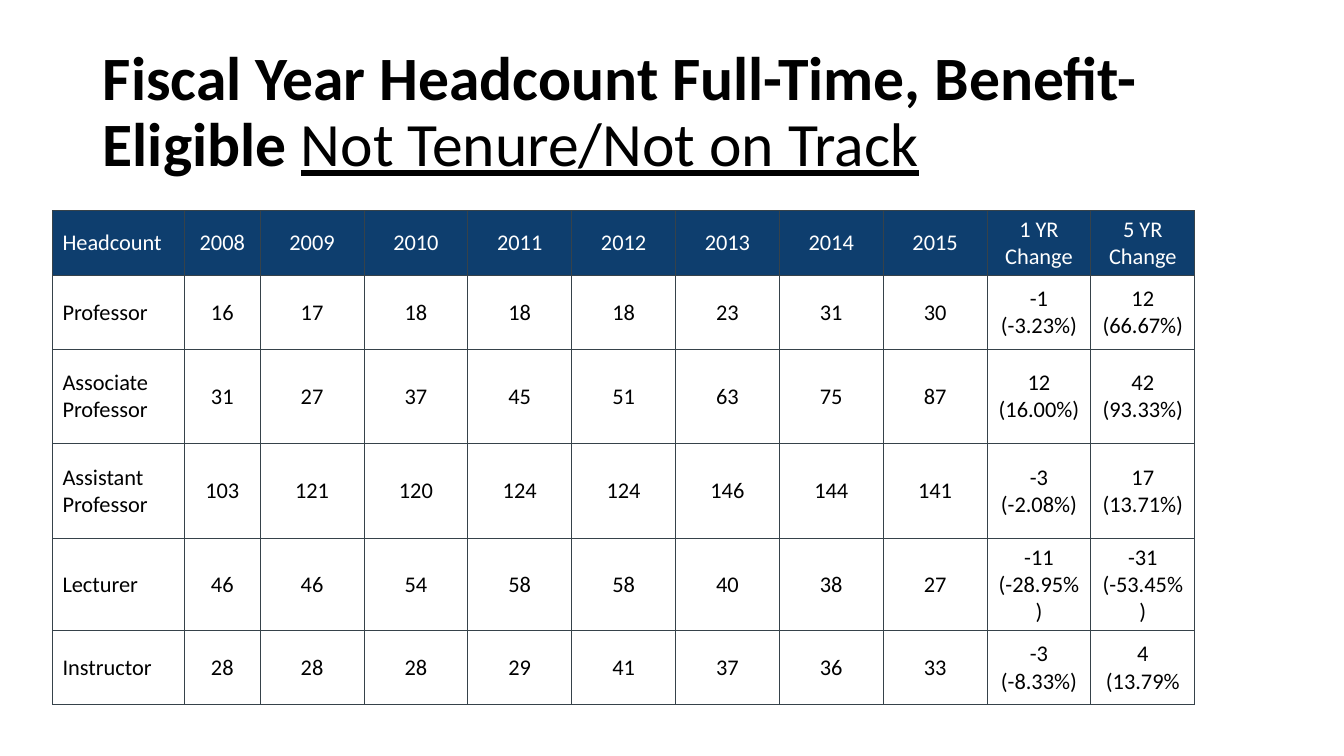
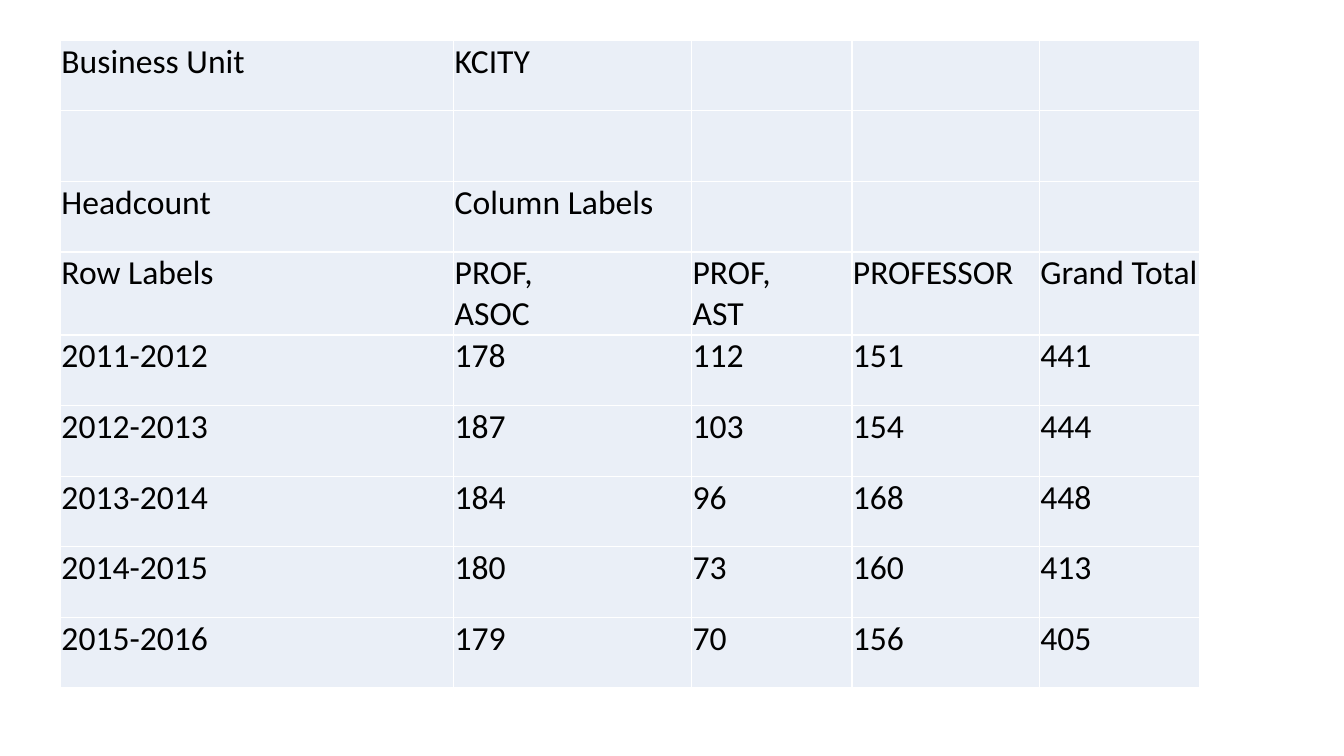
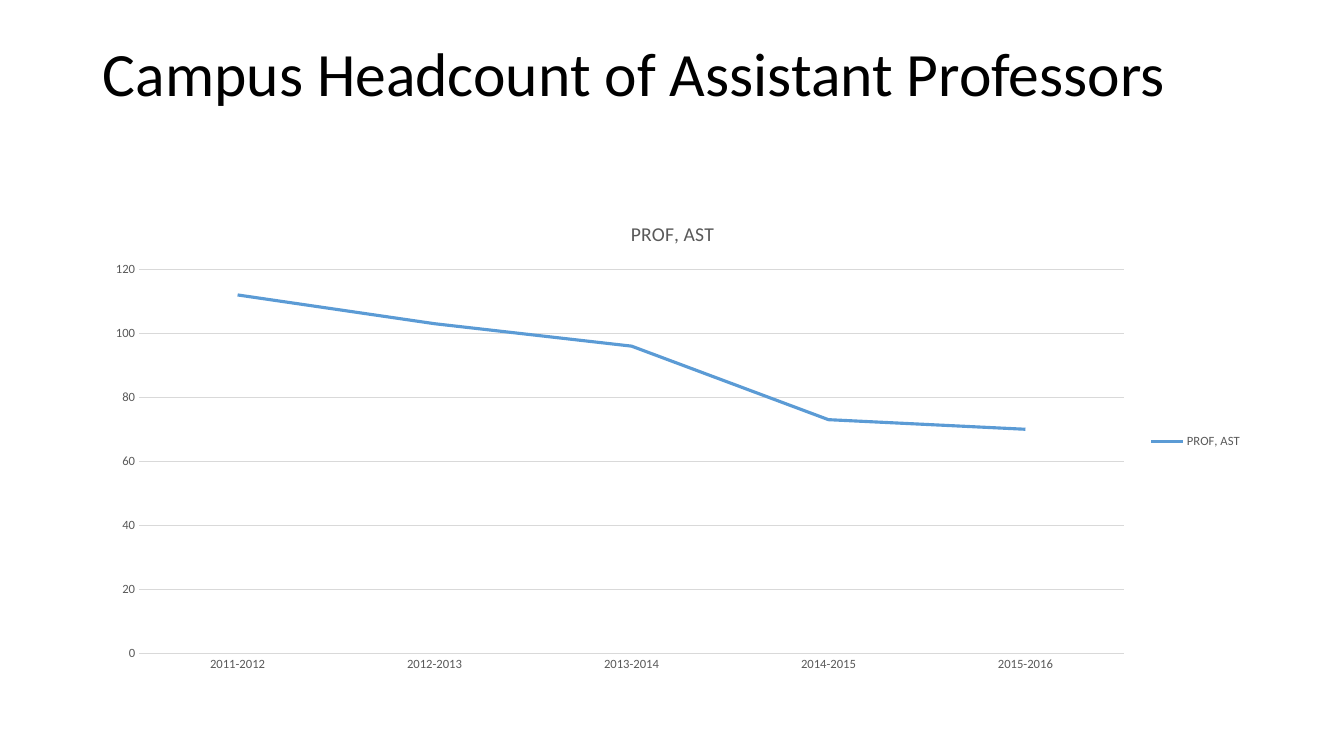
from dataclasses import dataclass

from lxml import etree
from pptx import Presentation
from pptx.chart.data import CategoryChartData
from pptx.dml.color import RGBColor
from pptx.enum.chart import XL_CHART_TYPE, XL_LEGEND_POSITION, XL_MARKER_STYLE, XL_TICK_MARK
from pptx.enum.text import MSO_ANCHOR, MSO_AUTO_SIZE, PP_ALIGN
from pptx.oxml.ns import qn
from pptx.util import Inches, Pt

LEFT, CENTER = PP_ALIGN.LEFT, PP_ALIGN.CENTER
TOP, MIDDLE = MSO_ANCHOR.TOP, MSO_ANCHOR.MIDDLE
NO_AUTOFIT = MSO_AUTO_SIZE.NONE
LINE_CHART = XL_CHART_TYPE.LINE
LEGEND_RIGHT = XL_LEGEND_POSITION.RIGHT
NO_MARKER = XL_MARKER_STYLE.NONE
NO_TICK = XL_TICK_MARK.NONE
TITLE_ONLY, BLANK = 5, 6


@dataclass(frozen=True)
class Theme:
    """Colours, font and type sizes shared by the slides."""
    font: str = "Calibri"
    ink: str = "000000"
    paper: str = "FFFFFF"
    navy: str = "0E3E6E"
    slate: str = "36424A"
    pale: str = "EAEFF7"
    gray: str = "595959"
    grid: str = "D9D9D9"
    blue: str = "5B9BD5"
    title: int = 44
    large: int = 24
    cell: int = 16
    chart_title: int = 14
    chart: int = 10
    label: int = 9


THEME = Theme()


def rgb(color):
    """Turn a hex string into a colour."""
    return RGBColor.from_string(color)


def style(font, size, color, bold=False, underline=False):
    """Apply the theme font with a size, colour and emphasis."""
    font.name = THEME.font
    font.size = Pt(size)
    font.color.rgb = rgb(color)
    font.bold = bold
    font.underline = underline


def write(para, text, align=LEFT, **look):
    """Add formatted text to a paragraph."""
    para.alignment = align
    span = para.add_run()
    span.text = text
    style(span.font, **look)


def set_borders(cell, color, width):
    """Draw all four borders of a table cell."""
    properties = cell._tc.get_or_add_tcPr()
    for side in ("a:lnL", "a:lnR", "a:lnT", "a:lnB"):
        line = etree.SubElement(properties, qn(side), w=str(Pt(width)))
        fill = etree.SubElement(line, qn("a:solidFill"))
        etree.SubElement(fill, qn("a:srgbClr"), val=color)


class Deck:
    """Holds the presentation and the current page."""

    def __init__(self):
        """Start a widescreen presentation."""
        self.file = Presentation()
        self.file.slide_width = Inches(13.33)
        self.file.slide_height = Inches(7.5)
        self.page = None

    def add_page(self, layout):
        """Start a new page."""
        self.page = self.file.slides.add_slide(self.file.slide_layouts[layout])

    def add_title(self, spans, anchor=MIDDLE, inset=0.05):
        """Fill the title placeholder with (text, format) pairs."""
        box = self.page.shapes.title
        box.left, box.top = Inches(0.92), Inches(0.4)
        box.width, box.height = Inches(11.5), Inches(1.45)
        frame = box.text_frame
        frame.auto_size = NO_AUTOFIT
        frame.word_wrap = True
        frame.vertical_anchor = anchor
        frame.margin_top = Inches(inset)
        para = frame.paragraphs[0]
        para.line_spacing = 0.9
        for text, look in spans:
            write(para, text, size=THEME.title, color=THEME.ink, **look)

    def add_table(self, left, top, widths, heights, rows, paint):
        """Add a table whose cells are finished by paint(cell, row, column, text)."""
        frame = self.page.shapes.add_table(
            len(rows), len(widths), Inches(left), Inches(top),
            Inches(sum(widths)), Inches(sum(heights)))
        table = frame.table
        table.first_row = table.horz_banding = False
        for column, width in zip(table.columns, widths):
            column.width = Inches(width)
        for line, height in zip(table.rows, heights):
            line.height = Inches(height)
        for row, texts in enumerate(rows):
            for column, text in enumerate(texts):
                paint(table.cell(row, column), row, column, text)

    def add_line_chart(self, name, categories, values):
        """Add a single-series line chart with a title and legend."""
        data = CategoryChartData()
        data.categories = categories
        data.add_series(name, values)
        chart = self.page.shapes.add_chart(
            LINE_CHART, Inches(0.92), Inches(2), Inches(11.5), Inches(4.76), data).chart
        style(chart.font, THEME.chart, THEME.ink)
        chart.has_title = True
        write(chart.chart_title.text_frame.paragraphs[0], name, align=CENTER,
              size=THEME.chart_title, color=THEME.gray)
        chart.chart_title.include_in_layout = False
        chart.has_legend = True
        chart.legend.position = LEGEND_RIGHT
        chart.legend.include_in_layout = False
        style(chart.legend.font, THEME.label, THEME.gray)
        for axis in (chart.category_axis, chart.value_axis):
            axis.major_tick_mark = axis.minor_tick_mark = NO_TICK
            style(axis.tick_labels.font, THEME.label, THEME.gray)
        chart.value_axis.has_major_gridlines = True
        chart.value_axis.format.line.fill.background()
        for item in (chart.category_axis, chart.value_axis.major_gridlines):
            item.format.line.color.rgb = rgb(THEME.grid)
            item.format.line.width = Pt(0.75)
        chart.plots[0].vary_by_categories = False
        series = chart.plots[0].series[0]
        series.smooth = False
        series.marker.style = NO_MARKER
        series.format.line.color.rgb = rgb(THEME.blue)
        series.format.line.width = Pt(2.25)


def fill_cell(cell, text, fill, border, width, **look):
    """Give a cell its borders, fill and text, one paragraph a line."""
    set_borders(cell, border, width)
    cell.fill.solid()
    cell.fill.fore_color.rgb = rgb(fill)
    frame = cell.text_frame
    for index, line in enumerate(text.split("\n") if text else []):
        write(frame.add_paragraph() if index else frame.paragraphs[0], line, **look)


def paint_headcount(cell, row, column, text):
    """Style a cell of the headcount table with its dark header."""
    cell.vertical_anchor = MIDDLE
    fill, ink = (THEME.paper, THEME.ink) if row else (THEME.navy, THEME.paper)
    fill_cell(cell, text, fill, THEME.slate, 0.75, size=THEME.cell, color=ink,
              align=CENTER if column else LEFT)


def paint_unit(cell, row, column, text):
    """Style a cell of the pale business unit table."""
    cell.margin_left = cell.margin_right = cell.margin_top = Inches(0.01)
    cell.margin_bottom = 0
    fill_cell(cell, text, THEME.pale, THEME.paper, 1, size=THEME.large, color=THEME.ink)


HEADCOUNT = [
    ["Headcount", *map(str, range(2008, 2016)), "1 YR Change", "5 YR Change"],
    ["Professor", "16", "17", "18", "18", "18", "23", "31", "30",
     "-1 (-3.23%)", "12 (66.67%)"],
    ["Associate Professor", "31", "27", "37", "45", "51", "63", "75", "87",
     "12 (16.00%)", "42 (93.33%)"],
    ["Assistant Professor", "103", "121", "120", "124", "124", "146", "144", "141",
     "-3 (-2.08%)", "17 (13.71%)"],
    ["Lecturer", "46", "46", "54", "58", "58", "40", "38", "27",
     "-11 (-28.95%)", "-31 (-53.45%)"],
    ["Instructor", "28", "28", "28", "29", "41", "37", "36", "33",
     "-3 (-8.33%)", "4 (13.79%"],
]

YEARS = ["2011-2012", "2012-2013", "2013-2014", "2014-2015", "2015-2016"]
ASSOCIATES = [178, 187, 184, 180, 179]
ASSISTANTS = [112, 103, 96, 73, 70]
PROFESSORS = [151, 154, 168, 160, 156]
TOTALS = [441, 444, 448, 413, 405]

UNIT = [
    ["Business Unit", "KCITY", "", "", ""],
    [""] * 5,
    ["Headcount", "Column Labels", "", "", ""],
    ["Row Labels", "PROF,\nASOC", "PROF,\nAST", "PROFESSOR", "Grand Total"],
    *(map(str, row) for row in zip(YEARS, ASSOCIATES, ASSISTANTS, PROFESSORS, TOTALS)),
]


def main():
    """Build and save the three slides."""
    deck = Deck()

    deck.add_page(TITLE_ONLY)
    deck.add_title([
        ("Fiscal Year Headcount Full-Time, Benefit-Eligible ", {"bold": True}),
        ("Not Tenure/Not on Track", {"underline": True}),
    ])
    deck.add_table(0.52, 2.09, [1.31, 0.75] + [1.03] * 9,
                   [0.56, 0.73, 0.94, 0.94, 0.73, 0.73], HEADCOUNT, paint_headcount)

    deck.add_page(BLANK)
    deck.add_table(0.6, 0.4, [3.9, 2.36, 1.59, 1.86, 1.59], [0.7] * len(UNIT),
                   UNIT, paint_unit)

    deck.add_page(TITLE_ONLY)
    deck.add_title([("Campus Headcount of Assistant Professors", {})], anchor=TOP, inset=0.03)
    deck.add_line_chart("PROF, AST", YEARS, ASSISTANTS)

    deck.file.save("out.pptx")


if __name__ == "__main__":
    main()
